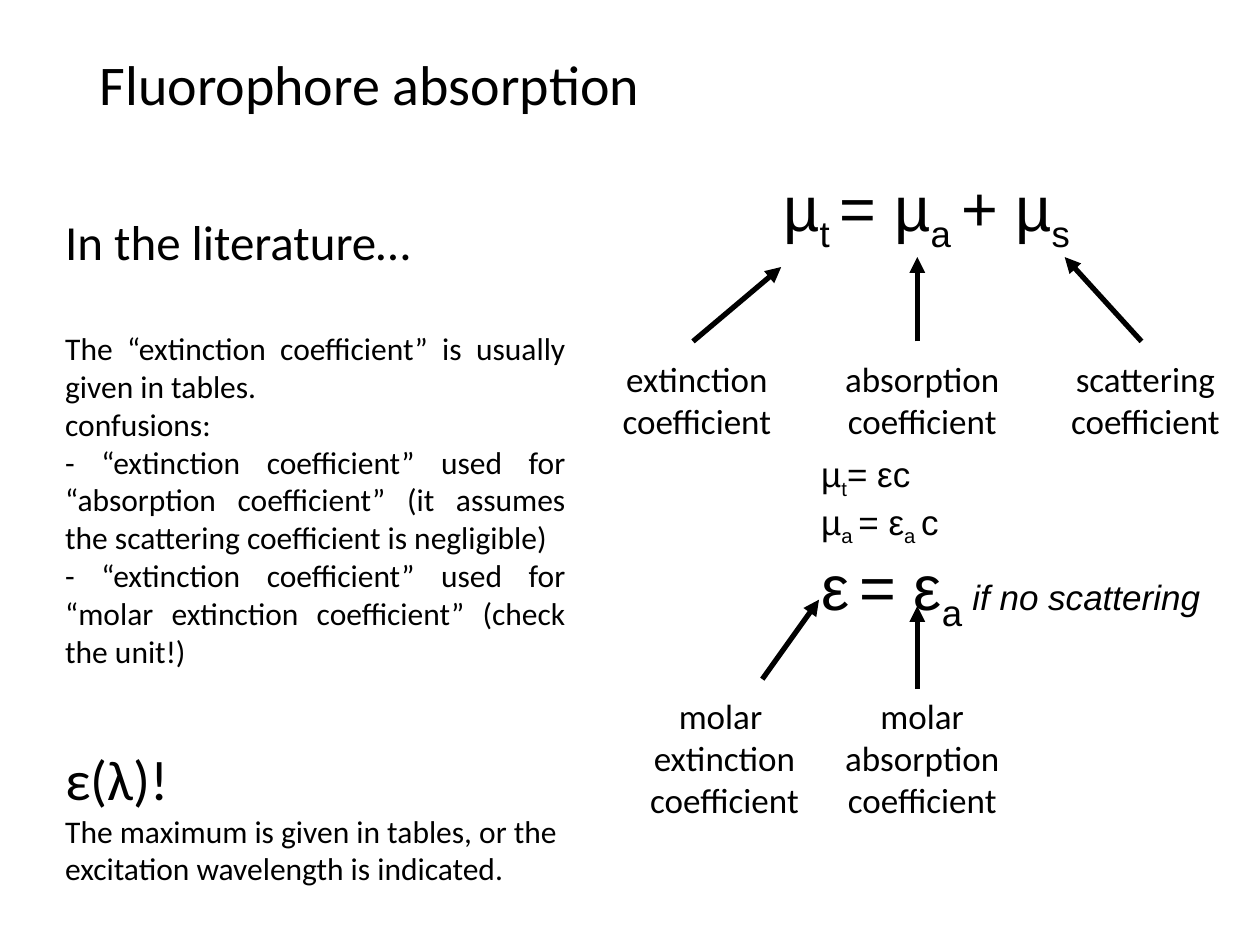
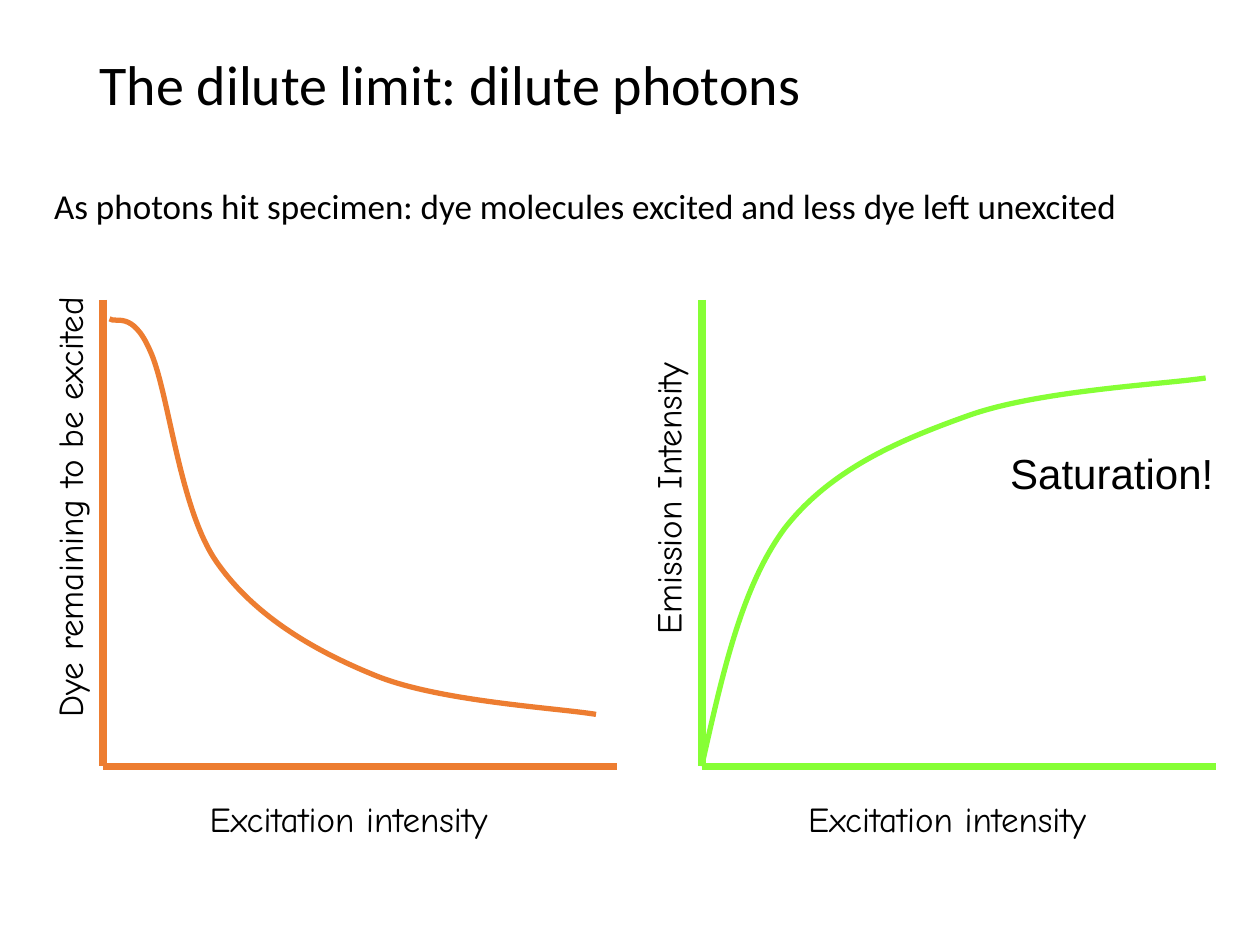
from dataclasses import dataclass

from lxml.etree import SubElement
from pptx import Presentation
from pptx.dml.color import RGBColor
from pptx.enum.shapes import MSO_CONNECTOR
from pptx.enum.text import MSO_ANCHOR, MSO_AUTO_SIZE, PP_ALIGN
from pptx.oxml.ns import qn
from pptx.util import Pt

BLACK, ORANGE, GREEN = "000000", "ED7D31", "86FF35"
BODY, MATH, HAND = "Calibri", "Arial", "Comic Neue"
TITLE_BOX = (49.7, 28.8, 620.6, 104.4)
TITLE_ONLY = 5
LEFT, CENTER, JUSTIFY = PP_ALIGN.LEFT, PP_ALIGN.CENTER, PP_ALIGN.JUSTIFY

Point = tuple[float, float]
Box = tuple[float, float, float, float]


@dataclass
class Para:
    """A paragraph; {braces} mark subscripts and note is an italic ending."""
    text: str
    size: float = 20
    align: PP_ALIGN = LEFT
    before: float = 0
    note: str = ""


@dataclass
class Term:
    """A named coefficient, one line per word, with an arrow up to its symbol."""
    words: list[str]
    center: float
    top: float
    start: Point
    end: Point


@dataclass
class Graph:
    x: float
    color: str
    y_label: str
    y_label_middle: float
    y_label_length: float
    curve: list[Point]


TERMS = [
    Term(["extinction", "coefficient"], 398.2, 200.9, (396, 195.1), (446.4, 152.6)),
    Term(["absorption", "coefficient"], 527, 200.9, (524.2, 195.1), (524.2, 146.9)),
    Term(["scattering", "coefficient"], 654.5, 200.9, (652.3, 195.1), (608.4, 146.9)),
    Term(["molar ", "extinction", "coefficient"], 414, 393.1, (435.6, 388.1), (468, 342.7)),
    Term(["molar", "absorption", "coefficient"], 527, 393.1, (524.2, 393.8), (524.2, 346.3)),
]

LITERATURE = [
    Para("In the literature…", 28, JUSTIFY),
    Para("The “extinction coefficient” is usually given in tables.", 18, JUSTIFY, 33.6),
    Para("confusions:", 18, JUSTIFY),
    Para("- “extinction coefficient” used for “absorption coefficient” "
         "(it assumes the scattering coefficient is negligible)", 18, JUSTIFY),
    Para("- “extinction coefficient” used for “molar extinction coefficient” "
         "(check the unit!)", 18, JUSTIFY),
    Para("ε(λ)!", 32, before=42.8),
    Para("The maximum is given in tables, or the excitation wavelength is indicated.", 18),
]

# Each curve is a start point followed by cubic Bézier triples.
GRAPHS = [
    Graph(59, ORANGE, "Dye remaining to be excited", 289.8, 321.8, [
        (62.6, 182.2),
        (66.2, 185), (75.6, 177.1), (85.7, 200.2),
        (96.5, 223.2), (102.2, 290.2), (123.8, 321.1),
        (145.4, 352.1), (180, 372.2), (216, 386.6),
        (252.7, 401), (319, 404.6), (340.6, 408.2)]),
    Graph(401, GREEN, "Emission Intensity", 284.8, 209.5, [
        (401, 437.8),
        (412.6, 386.6), (423.4, 335.5), (448.6, 301.7),
        (474.5, 268.6), (512.6, 252), (553, 237.6),
        (592.6, 223.2), (664.6, 219.6), (689, 216)]),
]
AXIS_TOP, AXIS_BOTTOM, AXIS_LENGTH = 171.4, 438, 293.8


def rgb(color: str) -> RGBColor:
    return RGBColor.from_string(color)


def place(sp, box: Box) -> None:
    sp.left, sp.top, sp.width, sp.height = map(Pt, box)


def add_run(p, text: str, size: float, font: str, sub=False, italic=False) -> None:
    r = p.add_run()
    r.text = text
    r.font.size, r.font.name, r.font.italic = Pt(size), font, italic
    r.font.color.rgb = rgb(BLACK)
    if sub:
        r._r.get_or_add_rPr().set("baseline", "-25000")


def add_text(s, box: Box, paras: list[Para], *, font=BODY, wrap=False,
             anchor=MSO_ANCHOR.TOP, rotation=0):
    sp = s.shapes.add_textbox(*map(Pt, box))
    sp.rotation = rotation
    tf = sp.text_frame
    tf.word_wrap, tf.vertical_anchor = wrap, anchor
    tf.auto_size = MSO_AUTO_SIZE.SHAPE_TO_FIT_TEXT
    for i, para in enumerate(paras):
        p = tf.add_paragraph() if i else tf.paragraphs[0]
        p.alignment = para.align
        if para.before:
            p.space_before = Pt(para.before)
        for n, piece in enumerate(para.text.replace("}", "{").split("{")):
            if piece:
                add_run(p, piece, para.size, font, sub=n % 2 == 1)
        if para.note:
            add_run(p, para.note, 20, font, italic=True)
    return sp


def add_line(s, start: Point, end: Point, *, color=BLACK, width=3.0, arrow=False) -> None:
    line = s.shapes.add_connector(MSO_CONNECTOR.STRAIGHT, *map(Pt, start + end))
    line.line.color.rgb, line.line.width = rgb(color), Pt(width)
    if arrow:
        SubElement(line.line._get_or_add_ln(), qn("a:tailEnd"), type="triangle")
    SubElement(line._element.spPr, qn("a:effectLst"))


def add_curve(s, points: list[Point], color: str) -> None:
    """Build the control polygon, then turn each three segments into a cubic."""
    start, *rest = [(Pt(x), Pt(y)) for x, y in points]
    builder = s.shapes.build_freeform(*start)
    builder.add_line_segments(rest, close=False)
    sp = builder.convert_to_shape()
    segments = list(sp._element.iter(qn("a:lnTo")))
    outline = segments[0].getparent()
    for i in range(0, len(segments), 3):
        cubic = SubElement(outline, qn("a:cubicBezTo"))
        for segment in segments[i:i + 3]:
            cubic.append(segment[0])
            outline.remove(segment)
    sp.shadow.inherit = False
    sp.fill.background()
    sp.line.color.rgb, sp.line.width = rgb(color), Pt(3)


def add_slide(prs, title: str):
    s = prs.slides.add_slide(prs.slide_layouts[TITLE_ONLY])
    sp = s.shapes.title
    place(sp, TITLE_BOX)
    tf = sp.text_frame
    tf.vertical_anchor, tf.auto_size = MSO_ANCHOR.TOP, MSO_AUTO_SIZE.NONE
    p = tf.paragraphs[0]
    p.alignment, p.line_spacing = LEFT, 0.9
    add_run(p, title, 32, BODY)
    return s


def add_term(s, term: Term) -> None:
    width, height = 104, 7.2 + 24.2 * len(term.words)
    add_line(s, term.start, term.end, arrow=True)
    add_text(s, (term.center - width / 2, term.top, width, height),
             [Para(word, align=CENTER) for word in term.words])


def add_graph(s, graph: Graph) -> None:
    origin = (graph.x, AXIS_BOTTOM)
    for start, end in (((graph.x, AXIS_TOP), origin),
                       (origin, (graph.x + AXIS_LENGTH, AXIS_BOTTOM))):
        add_line(s, start, end, color=graph.color, width=4.5)
    add_curve(s, graph.curve, graph.color)
    length, height = graph.y_label_length, 31
    add_text(s, (graph.x - 19.5 - length / 2, graph.y_label_middle - height / 2,
                 length, height), [Para(graph.y_label, align=CENTER)],
             font=HAND, wrap=True, anchor=MSO_ANCHOR.MIDDLE, rotation=270)
    add_text(s, (graph.x + 41, 452.5, 198.7, height),
             [Para("Excitation intensity", align=CENTER)],
             font=HAND, anchor=MSO_ANCHOR.MIDDLE)


def absorption_slide(prs) -> None:
    s = add_slide(prs, "Fluorophore absorption")
    add_text(s, (440.6, 92.9, 184.3, 50.4), [Para("µ{t }= µ{a }+ µ{s}", 36)], font=MATH)
    add_text(s, (462.2, 254.9, 234, 98.6),
             [Para("µ{t}= εc"), Para("µ{a }= ε{a }c"),
              Para("ε{ }= ε{a }", 36, note="if no scattering")], font=MATH)
    for term in TERMS:
        add_term(s, term)
    add_text(s, (30.2, 117.4, 300.2, 397.4), LITERATURE, wrap=True)


def dilute_limit_slide(prs) -> None:
    s = add_slide(prs, "The dilute limit: dilute photons")
    add_text(s, (23.8, 101.5, 627.8, 31.7),
             [Para("As photons hit specimen: dye molecules excited and less dye left unexcited")],
             anchor=MSO_ANCHOR.MIDDLE)
    for graph in GRAPHS:
        add_graph(s, graph)
    add_text(s, (570.2, 252, 130.3, 36), [Para("Saturation!", 24)], font=MATH)


def main() -> None:
    prs = Presentation()
    prs.slide_width, prs.slide_height = Pt(720), Pt(540)
    absorption_slide(prs)
    dilute_limit_slide(prs)
    prs.save("out.pptx")


if __name__ == "__main__":
    main()
